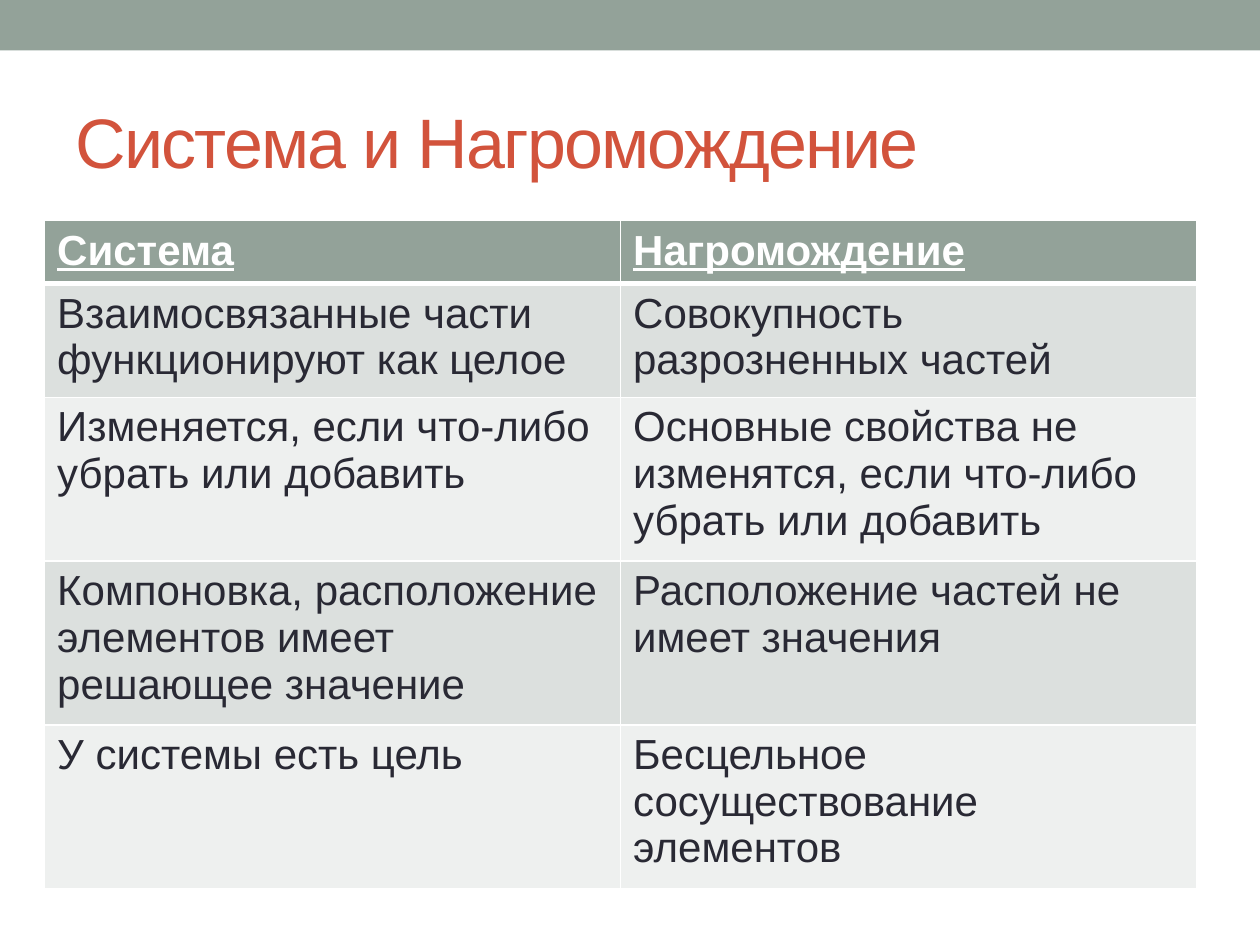
from lxml import etree
from pptx import Presentation
from pptx.dml.color import RGBColor
from pptx.enum.shapes import MSO_SHAPE
from pptx.enum.text import MSO_ANCHOR
from pptx.oxml.ns import qn
from pptx.util import Cm, Pt

RECT = MSO_SHAPE.RECTANGLE
MIDDLE = MSO_ANCHOR.MIDDLE
SAGE, WHITE, INK, RUST = "93A299", "FFFFFF", "292934", "D2533C"
BANDS = ["EEF0EF", "DCE0DE"]
ROWS = [
    ("Система", "Нагромождение"),
    ("Взаимосвязанные части функционируют как целое",
     "Совокупность разрозненных частей"),
    ("Изменяется, если что-либо убрать или добавить",
     "Основные свойства не изменятся, если что-либо убрать или добавить"),
    ("Компоновка, расположение элементов имеет решающее значение",
     "Расположение частей не имеет значения"),
    ("У системы есть цель", "Бесцельное сосуществование элементов"),
]
HEIGHTS = [1.17, 2.01, 2.01, 2.87, 2.87]


def add_run(frame, text, size, color):
    run = frame.paragraphs[0].add_run()
    run.text = text
    run.font.name = "Arial"
    run.font.size = Pt(size)
    run.font.color.rgb = RGBColor.from_string(color)
    return run


def add_edge(cell, side, width):
    """Draw a white border on one side (L, R, T or B); call before filling."""
    props = cell._tc.get_or_add_tcPr()
    line = etree.SubElement(props, qn("a:ln" + side), w=str(Pt(width)))
    fill = etree.SubElement(line, qn("a:solidFill"))
    etree.SubElement(fill, qn("a:srgbClr"), val=WHITE)


prs = Presentation()
prs.slide_width, prs.slide_height = Cm(25.4), Cm(19.05)
slide = prs.slides.add_slide(prs.slide_layouts[6])

bar = slide.shapes.add_shape(RECT, 0, 0, prs.slide_width, Cm(1.02))
bar.shadow.inherit = False
bar.fill.solid()
bar.fill.fore_color.rgb = RGBColor.from_string(SAGE)
bar.line.fill.background()

title = slide.shapes.add_textbox(Cm(1.27), Cm(1.47), Cm(22.86), Cm(2.74))
frame = title.text_frame
frame.word_wrap = True
frame.vertical_anchor = MIDDLE
run = add_run(frame, "Система и Нагромождение", 40, RUST)
run.font._element.set("spc", "-100")

table = slide.shapes.add_table(
    len(ROWS), 2, Cm(0.9), Cm(4.45), Cm(23.22), Cm(sum(HEIGHTS))).table
for col in table.columns:
    col.width = Cm(11.61)

for r, texts in enumerate(ROWS):
    table.rows[r].height = Cm(HEIGHTS[r])
    head = r == 0
    for c, text in enumerate(texts):
        cell = table.cell(r, c)
        add_edge(cell, "L", 1)
        add_edge(cell, "R", 1)
        add_edge(cell, "T", 3 if r == 1 else 1)
        add_edge(cell, "B", 3 if head else 1)
        cell.fill.solid()
        cell.fill.fore_color.rgb = RGBColor.from_string(
            SAGE if head else BANDS[r % 2])
        run = add_run(cell.text_frame, text, 24, WHITE if head else INK)
        run.font.bold = head
        run.font.underline = head

prs.save("out.pptx")
